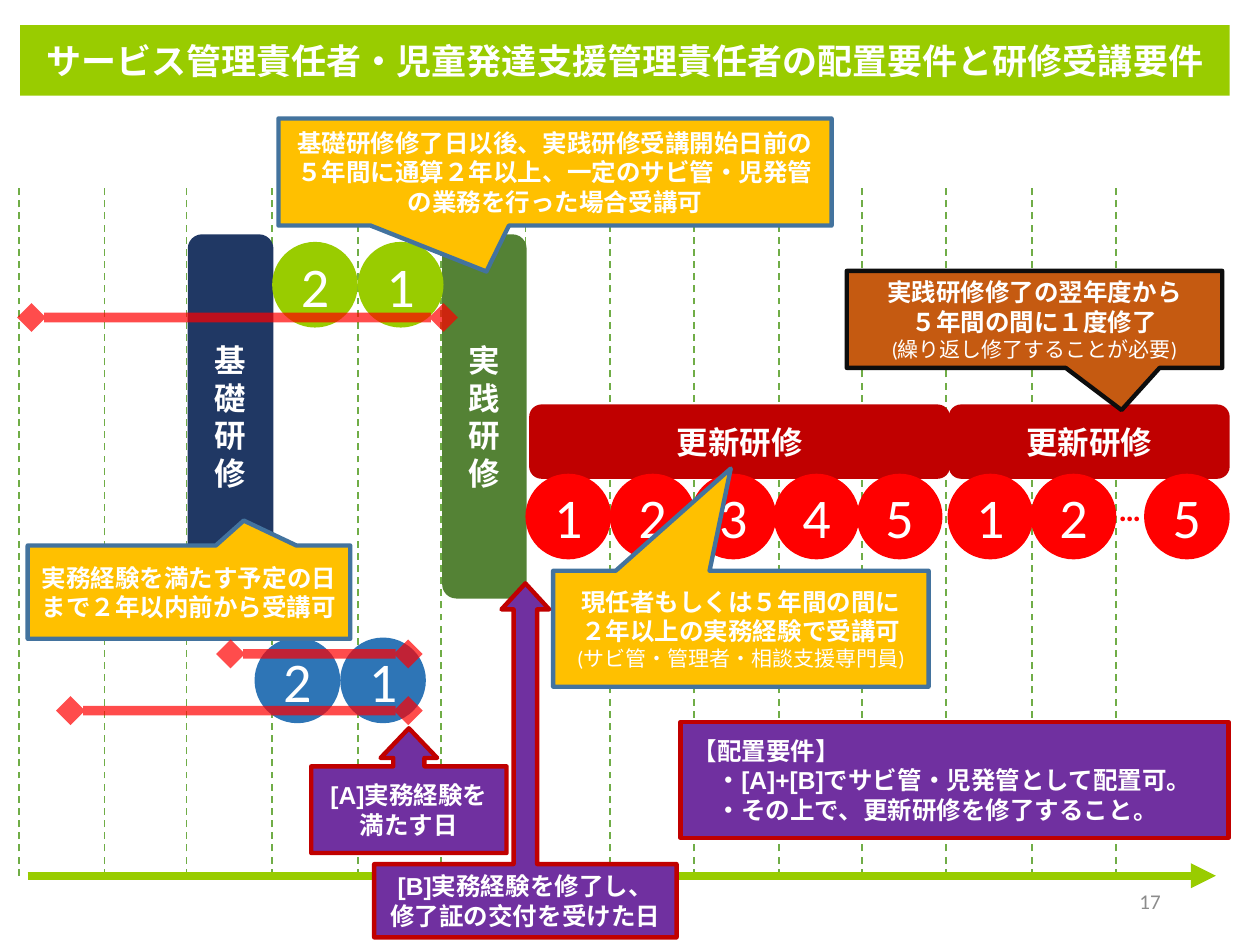
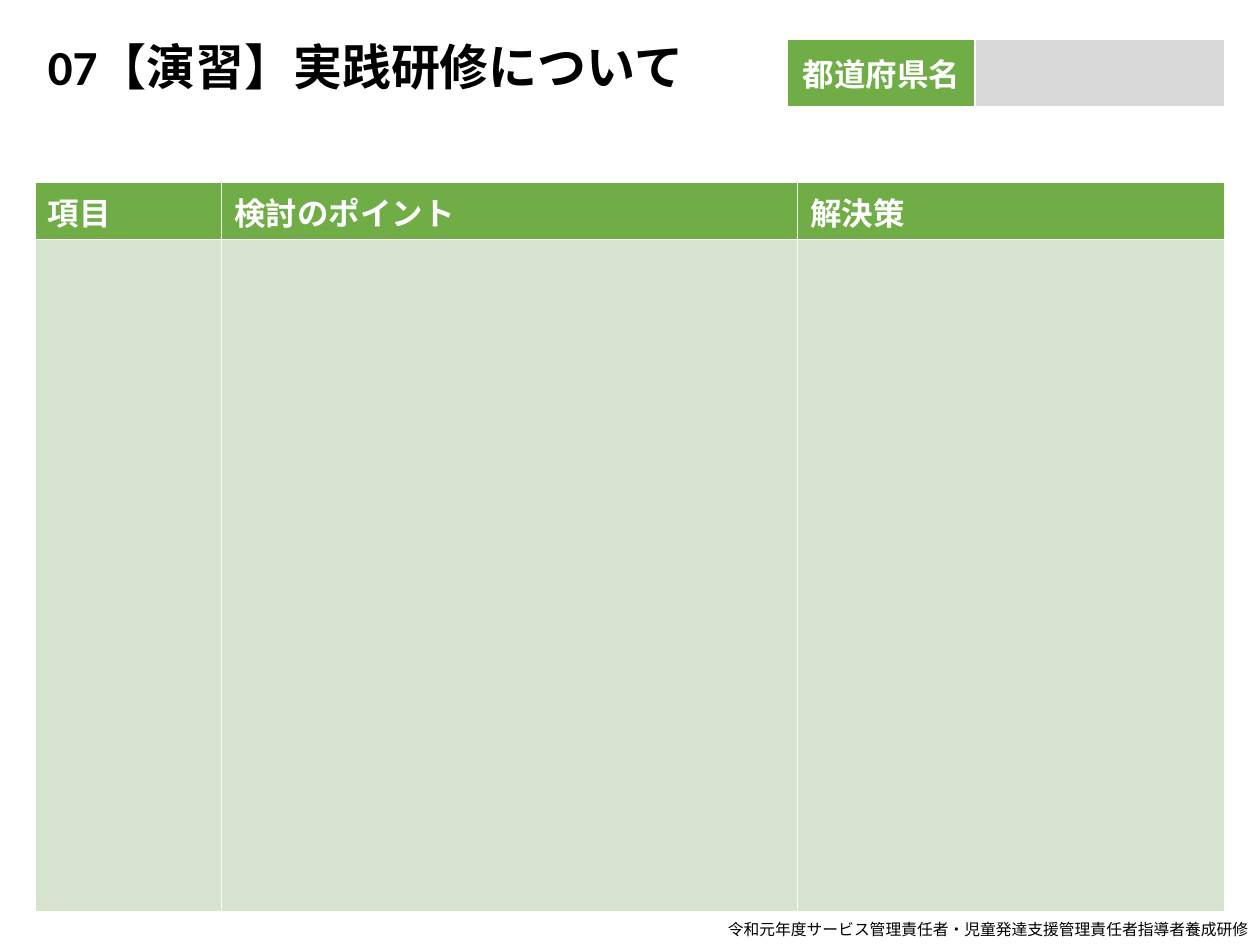
from lxml import etree
from pptx import Presentation
from pptx.dml.color import RGBColor
from pptx.enum.dml import MSO_LINE
from pptx.enum.shapes import MSO_CONNECTOR, MSO_SHAPE
from pptx.enum.text import MSO_ANCHOR, MSO_AUTO_SIZE, PP_ALIGN
from pptx.oxml.ns import qn
from pptx.util import Inches, Pt

LEFT, CENTER, RIGHT = PP_ALIGN.LEFT, PP_ALIGN.CENTER, PP_ALIGN.RIGHT
TOP, MIDDLE = MSO_ANCHOR.TOP, MSO_ANCHOR.MIDDLE
FIXED = MSO_AUTO_SIZE.NONE
STRAIGHT = MSO_CONNECTOR.STRAIGHT
DASH = MSO_LINE.DASH
RECT = MSO_SHAPE.RECTANGLE
ROUND = MSO_SHAPE.ROUNDED_RECTANGLE
OVAL = MSO_SHAPE.OVAL
WEDGE = MSO_SHAPE.RECTANGULAR_CALLOUT
ARROW = MSO_SHAPE.UP_ARROW_CALLOUT

WHITE, BLACK, GRAY, SILVER = "FFFFFF", "000000", "8C8C8C", "D9D9D9"
LIME, GREEN, PALE, FOREST = "99CC00", "70AD47", "D5E3CF", "548235"
NAVY, BLUE, STEEL = "203864", "2E75B6", "43739E"
RED, DARK, GOLD, RUST = "FF0000", "C00000", "FFC000", "C55A11"
PURPLE, INK = "7030A0", "0D0D0D"
CJK = "Noto Sans CJK JP"
color = RGBColor.from_string


def write(frame, lines, size, hue=WHITE, bold=True, align=CENTER, face="Calibri", anchor=MIDDLE):
    frame.word_wrap = True
    frame.vertical_anchor = anchor
    for i, text in enumerate(lines):
        para = frame.add_paragraph() if i else frame.paragraphs[0]
        note = text.startswith("(")
        para.text = text
        para.alignment = align
        para.font.size = Pt(12 if note else size)
        para.font.bold = bold and not note
        para.font.color.rgb = color(hue)
        para.font.name = face
        font = para._p.pPr.find(qn("a:defRPr"))
        etree.SubElement(font, qn("a:ea")).set("typeface", CJK)


def rule(slide, start, end, hue, width, head=None, tail=None, alpha=None):
    link = slide.shapes.add_connector(STRAIGHT, *map(Inches, start + end))
    link.line.color.rgb = color(hue)
    link.line.width = Pt(width)
    props = link._element.spPr
    etree.SubElement(props, qn("a:effectLst"))
    line = props.find(qn("a:ln"))
    if alpha:
        tint = line.find(qn("a:solidFill"))[0]
        etree.SubElement(tint, qn("a:alpha")).set("val", str(alpha * 1000))
    for tag, kind in (("a:headEnd", head), ("a:tailEnd", tail)):
        if kind:
            etree.SubElement(line, qn(tag)).set("type", kind)
    return link


deck = Presentation()
deck.slide_width, deck.slide_height = Inches(10), Inches(7.5)
plan, work = [deck.slides.add_slide(deck.slide_layouts[5]) for _ in range(2)]

heads = [
    (plan, (0.16, 0.2, 9.6, 0.56), "サービス管理責任者・児童発達支援管理責任者の配置要件と研修受講要件", 20, WHITE, CENTER, CJK),
    (work, (0.28, 0.24, 5.55, 0.57), "07【演習】実践研修について", 28, BLACK, LEFT, "Calibri"),
]
for slide, area, text, size, hue, align, face in heads:
    title = slide.shapes.title
    title.left, title.top, title.width, title.height = map(Inches, area)
    title.text_frame.auto_size = FIXED
    write(title.text_frame, [text], size, hue, align=align, face=face)
plan.shapes.title.fill.solid()
plan.shapes.title.fill.fore_color.rgb = color(LIME)

for x in (0.15, 0.83, 1.48, 2.16, 2.84, 3.5, 4.17, 4.84, 5.51, 6.18, 6.84, 7.51, 8.19, 8.86):
    rule(plan, (x, 6.95), (x, 1.49), GREEN, 1).line.dash_style = DASH
rule(plan, (0.22, 6.95), (9.65, 6.95), LIME, 4.75, tail="triangle")

shapes = [
    (ROUND, (1.49, 1.86, 0.68, 2.89), [], NAVY, None, ["基礎研修"], 18),
    (ROUND, (3.51, 1.86, 0.67, 2.89), [], FOREST, None, ["実践研修"], 18),
    (ROUND, (4.2, 3.21, 3.34, 0.59), [], DARK, None, ["更新研修"], 18),
    (ROUND, (7.53, 3.21, 2.23, 0.59), [], DARK, None, ["更新研修"], 18),
]
years = [
    (3.76, RED, [(4.17, 1), (4.84, 2), (5.48, 3), (6.14, 4), (6.8, 5), (7.52, 1), (8.18, 2), (9.08, 5)]),
    (5.06, BLUE, [(2.7, 1), (2.02, 2)]),
    (1.92, LIME, [(2.84, 1), (2.16, 2)]),
]
for y, hue, marks in years:
    shapes += [(OVAL, (x, y, 0.68, 0.68), [], hue, None, [str(n)], 32) for x, n in marks]
shapes += [
    (WEDGE, (0.22, 4.33, 2.56, 0.74), [0.17, -0.768], GOLD, STEEL,
     ["実務経験を満たす予定の日まで２年以内前から受講可"], 14),
    (WEDGE, (2.21, 0.94, 4.39, 0.85), [-0.124, 0.929], GOLD, STEEL,
     ["基礎研修修了日以後、実践研修受講開始日前の５年間に通算２年以上、一定のサビ管・児発管の業務を行った場合受講可"], 14),
    (WEDGE, (6.72, 2.15, 2.98, 0.77), [0.232, 0.935], RUST, INK,
     ["実践研修修了の翌年度から", "５年間の間に１度修了", "(繰り返し修了することが必要)"], 14),
    (WEDGE, (4.39, 4.53, 2.98, 0.92), [-0.027, -1.382], GOLD, STEEL,
     ["現任者もしくは５年間の間に", "２年以上の実務経験で受講可", "(サビ管・管理者・相談支援専門員)"], 14),
    (ARROW, (2.97, 4.63, 2.4, 2.81), [0.078, 0.079, 0.086, 0.207], PURPLE, DARK,
     ["[B]実務経験を修了し、", "修了証の交付を受けた日"], 14),
    (ARROW, (2.47, 5.78, 1.55, 0.99), [0.25, 0.227, 0.238, 0.695], PURPLE, DARK,
     ["[A]実務経験を", "満たす日"], 14),
    (RECT, (5.4, 5.73, 4.35, 0.92), [], PURPLE, DARK,
     ["【配置要件】", "・[A]+[B]でサビ管・児発管として配置可。", "・その上で、更新研修を修了すること。"], 14),
]
for kind, area, bends, fill, edge, lines, size in shapes:
    shape = plan.shapes.add_shape(kind, *map(Inches, area))
    shape.shadow.inherit = False
    shape.fill.solid()
    shape.fill.fore_color.rgb = color(fill)
    for i, bend in enumerate(bends):
        shape.adjustments[i] = bend
    if edge:
        shape.line.color.rgb = color(edge)
        shape.line.width = Pt(2.5)
    else:
        shape.line.fill.background()
    write(shape.text_frame, lines, size, bold=kind != OVAL,
          align=LEFT if kind == RECT else CENTER,
          face="Arial" if fill == PURPLE else "Calibri")
    if kind == RECT:
        for para in shape.text_frame.paragraphs[1:]:
            para._p.pPr.set("marL", str(Inches(0.19)))

for x, end, y in ((0.56, 3.24, 5.64), (1.83, 3.24, 5.19), (0.25, 3.52, 2.52)):
    rule(plan, (x, y), (end, y), RED, 5.5, "diamond", "diamond", 70)

labels = [
    (plan, (7.06, 6.95, 2.25, 0.4), "17", 12, GRAY, False, RIGHT, MIDDLE),
    (plan, (8.78, 3.84, 0.84, 0.4), "…", 18, RED, True, LEFT, TOP),
    (work, (5.21, 7.25, 4.79, 0.25), "令和元年度サービス管理責任者・児童発達支援管理責任者指導者養成研修", 9, BLACK, False, RIGHT, TOP),
]
for slide, area, text, size, hue, bold, align, anchor in labels:
    label = slide.shapes.add_textbox(*map(Inches, area))
    write(label.text_frame, [text], size, hue, bold, align, anchor=anchor)

tables = [
    ((6.25, 0.31, 3.47, 0.54), [1.49, 1.98], [0.54], ["都道府県名", ""], [[GREEN, SILVER]], CENTER, MIDDLE),
    ((0.28, 1.45, 9.44, 5.8), [1.48, 4.57, 3.39], [0.45, 5.34],
     ["項目", "検討のポイント", "解決策"], [[GREEN] * 3, [PALE] * 3], LEFT, TOP),
]
for area, cols, rows, names, fills, align, anchor in tables:
    grid = work.shapes.add_table(len(rows), len(cols), *map(Inches, area)).table
    grid.horz_banding = False
    for col, width in zip(grid.columns, cols):
        col.width = Inches(width)
    for row, height, hues in zip(grid.rows, rows, fills):
        row.height = Inches(height)
        for cell, hue in zip(row.cells, hues):
            cell.fill.solid()
            cell.fill.fore_color.rgb = color(hue)
    for c, name in enumerate(names):
        if name:
            cell = grid.cell(0, c)
            write(cell.text_frame, [name], 18, align=align)
            cell.vertical_anchor = anchor

deck.save("out.pptx")
